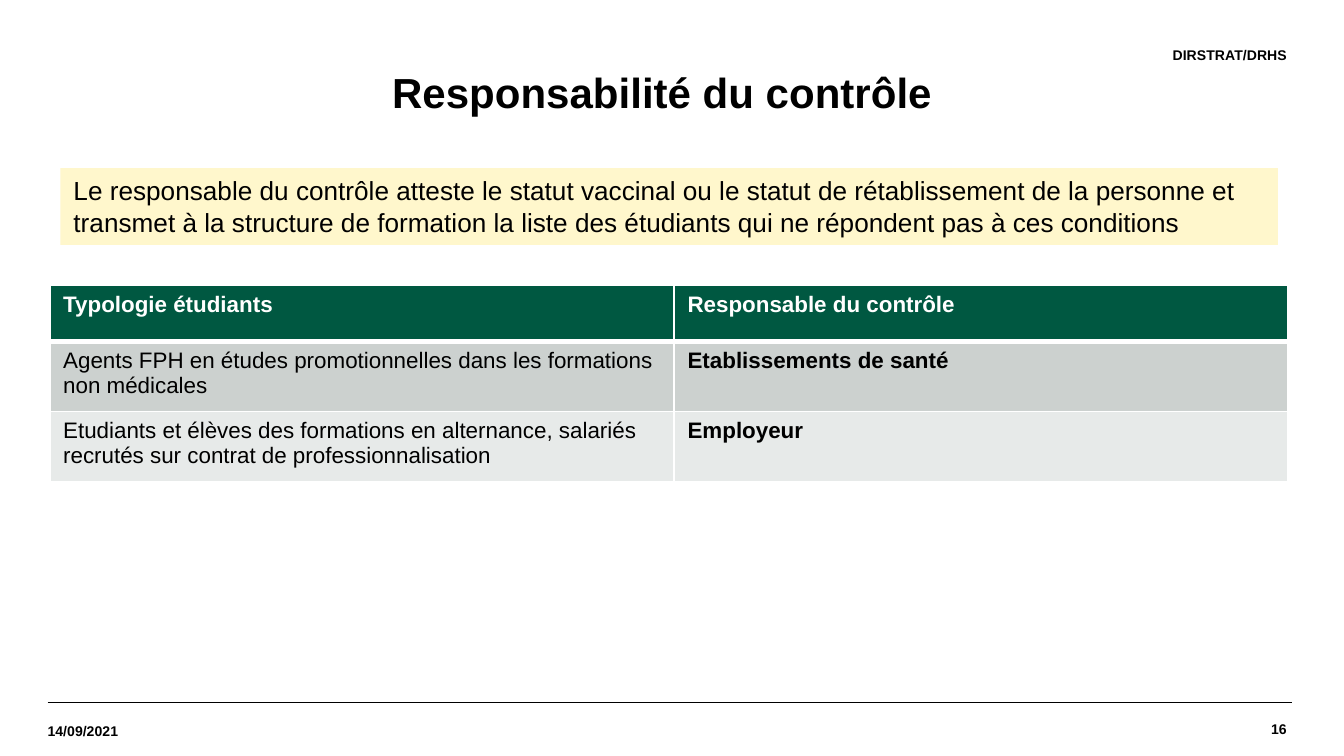
from dataclasses import dataclass

from lxml.etree import SubElement
from pptx import Presentation
from pptx.dml.color import RGBColor
from pptx.enum.shapes import MSO_CONNECTOR, MSO_SHAPE
from pptx.enum.text import MSO_ANCHOR, MSO_AUTO_SIZE, PP_ALIGN
from pptx.oxml.ns import qn
from pptx.util import Cm, Pt


@dataclass(frozen=True)
class Theme:
    font: str = "Arial"
    ink: str = "000000"
    paper: str = "FFFFFF"
    header: str = "005841"
    bands: tuple = ("CCD1CF", "E7EAE9")
    callout: str = "FFF7CC"
    title_size: float = 22.5
    callout_size: float = 14
    table_size: float = 12
    label_size: float = 7.5
    rule_width: float = 0.8


THEME = Theme()

ROWS = [
    ("Typologie étudiants", "Responsable du contrôle"),
    ("Agents FPH en études promotionnelles dans les formations non médicales",
     "Etablissements de santé"),
    ("Etudiants et élèves des formations en alternance, salariés recrutés "
     "sur contrat de professionnalisation", "Employeur"),
]


def rgb(value):
    return RGBColor.from_string(value)


def write(frame, text, size, color=THEME.ink, bold=False, align=PP_ALIGN.LEFT):
    frame.word_wrap = True
    frame.text = text
    paragraph = frame.paragraphs[0]
    paragraph.alignment = align
    font = paragraph.runs[0].font
    font.name = THEME.font
    font.size = Pt(size)
    font.bold = bold
    font.color.rgb = rgb(color)
    return paragraph


def add_label(slide, box, text, align=PP_ALIGN.LEFT):
    frame = slide.shapes.add_textbox(*map(Cm, box)).text_frame
    frame.margin_left = frame.margin_right = 0
    frame.margin_top = frame.margin_bottom = 0
    frame.vertical_anchor = MSO_ANCHOR.MIDDLE
    write(frame, text, THEME.label_size, bold=True, align=align)


def add_title(slide, box, text):
    frame = slide.shapes.add_textbox(*map(Cm, box)).text_frame
    frame.vertical_anchor = MSO_ANCHOR.MIDDLE
    heading = write(frame, text, THEME.title_size, bold=True)
    heading.line_spacing = 0.9
    heading._p.get_or_add_pPr().set("marL", str(Cm(0.05)))


def add_callout(slide, box, text):
    callout = slide.shapes.add_shape(MSO_SHAPE.RECTANGLE, *map(Cm, box))
    callout.shadow.inherit = False
    callout.fill.solid()
    callout.fill.fore_color.rgb = rgb(THEME.callout)
    callout.line.fill.background()
    frame = callout.text_frame
    write(frame, text, THEME.callout_size)
    frame.vertical_anchor = MSO_ANCHOR.TOP
    frame.auto_size = MSO_AUTO_SIZE.SHAPE_TO_FIT_TEXT


def set_borders(cell, **widths):
    properties = cell._tc.get_or_add_tcPr()
    for side in "LRTB":
        border = SubElement(properties, qn(f"a:ln{side}"), w=str(Pt(widths.get(side, 1))))
        paint = SubElement(border, qn("a:solidFill"))
        SubElement(paint, qn("a:srgbClr"), val=THEME.paper)


def add_responsibility_table(slide, box, rows, widths, heights):
    table = slide.shapes.add_table(len(rows), len(widths), *map(Cm, box)).table
    for column, width in zip(table.columns, widths):
        column.width = Cm(width)
    for r, (texts, height) in enumerate(zip(rows, heights)):
        table.rows[r].height = Cm(height)
        is_header = r == 0
        fill = THEME.header if is_header else THEME.bands[(r - 1) % 2]
        color = THEME.paper if is_header else THEME.ink
        for c, text in enumerate(texts):
            cell = table.cell(r, c)
            set_borders(cell, B=3 if is_header else 1, T=3 if r == 1 else 1)
            cell.fill.solid()
            cell.fill.fore_color.rgb = rgb(fill)
            write(cell.text_frame, text, THEME.table_size, color, bold=is_header or c == 1)


def add_footer(slide, box, date, number):
    left, top, width, height = box
    for start in (left, left + 0.1):
        rule = slide.shapes.add_connector(
            MSO_CONNECTOR.STRAIGHT, Cm(start), Cm(top), Cm(start + width), Cm(top))
        rule.line.color.rgb = rgb(THEME.ink)
        rule.line.width = Pt(THEME.rule_width)
        SubElement(rule._element.spPr, qn("a:effectLst"))
    number_width = 3.76
    add_label(slide, (left + width - number_width, top, number_width, height),
              number, PP_ALIGN.RIGHT)
    add_label(slide, (left, top + 0.05, 3.25, height - 0.02), date)


def main():
    deck = Presentation()
    deck.slide_width, deck.slide_height = Cm(25.4), Cm(14.29)
    slide = deck.slides.add_slide(deck.slide_layouts[6])

    add_footer(slide, (0.9, 13.28, 23.42, 0.99), "14/09/2021", "16")
    add_title(slide, (7.11, 1.04, 11.2, 1.5), "Responsabilité du contrôle")
    add_label(slide, (7.98, 0.54, 16.34, 0.99), "DIRSTRAT/DRHS", PP_ALIGN.RIGHT)
    add_responsibility_table(slide, (0.94, 5.39, 23.4, 3.72), ROWS,
                             widths=(11.8, 11.6), heights=(1.07, 1.32, 1.32))
    add_callout(slide, (1.14, 3.18, 23.01, 1.45),
                "Le responsable du contrôle atteste le statut vaccinal ou le statut de "
                "rétablissement de la personne et transmet à la structure de formation la "
                "liste des étudiants qui ne répondent pas à ces conditions")
    deck.save("out.pptx")


if __name__ == "__main__":
    main()
